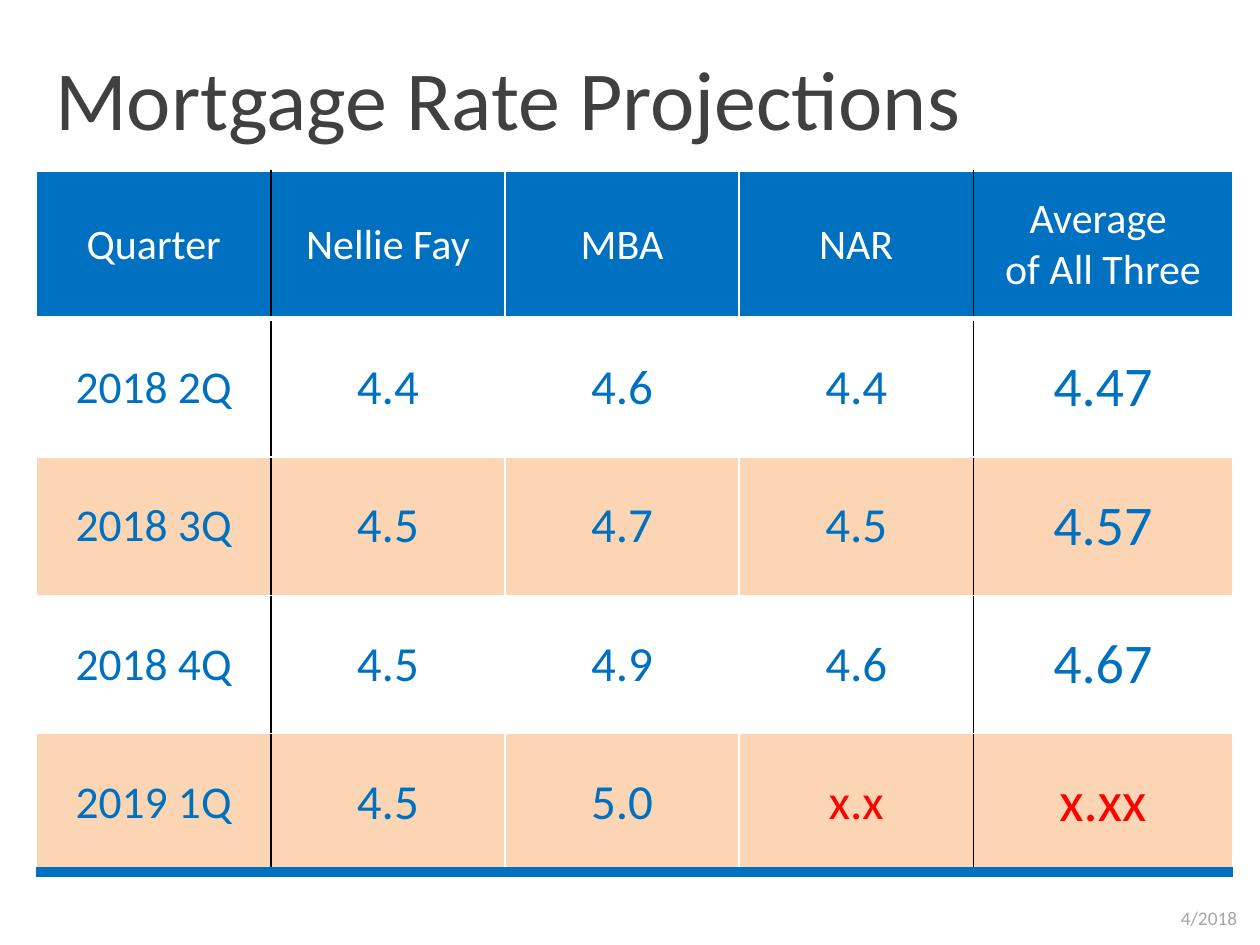
from lxml import etree
from pptx import Presentation
from pptx import util as u
from pptx.dml.color import RGBColor
from pptx.enum import text
from pptx.oxml.ns import qn

BLUE, PEACH, WHITE, BLACK, RED = "0070C0", "FCD5B5", "FFFFFF", "000000", "FF0000"
HEADERS = ["Quarter", "Nellie Fay", "MBA", "NAR", "Average \nof All Three"]
RATES = [
    ["2018 2Q", "4.4", "4.6", "4.4", "4.47"],
    ["2018 3Q", "4.5", "4.7", "4.5", "4.57"],
    ["2018 4Q", "4.5", "4.9", "4.6", "4.67"],
    ["2019 1Q", "4.5", "5.0", "x.x", "x.xx"],
]
COL_WIDTHS = [4.72] * 4 + [5.23]
ROW_HEIGHTS = [2.97] + [2.79] * 4
BODY_SIZES = [26, 28, 28, 28, 32]
DARK_EDGES = (1, 4)  # black rules stand left of these columns


def color(hex_code):
    return RGBColor.from_string(hex_code)


def write(tf, content, size, fill, align=text.PP_ALIGN.LEFT):
    tf.text = content
    for p in tf.paragraphs:
        p.alignment = align
        for r in p.runs:
            r.font.name = "Calibri"
            r.font.size = u.Pt(size)
            r.font.color.rgb = color(fill)


def place(sp, left, top, width, height):
    sp.left, sp.top, sp.width, sp.height = (u.Cm(v) for v in (left, top, width, height))


def add_border(cell, side, hex_code, width):
    ln = etree.SubElement(cell._tc.get_or_add_tcPr(), qn(f"a:ln{side}"), w=str(u.Pt(width)))
    solid = etree.SubElement(ln, qn("a:solidFill"))
    etree.SubElement(solid, qn("a:srgbClr"), val=hex_code)


def format_cell(cell, row, col, content):
    last_row = len(RATES)
    # Borders come before the fill in the cell properties
    add_border(cell, "L", BLACK if col in DARK_EDGES else WHITE, 1)
    add_border(cell, "R", BLACK if col + 1 in DARK_EDGES else WHITE, 1)
    add_border(cell, "T", WHITE, 3 if row == 1 else 1)
    if row == last_row:
        add_border(cell, "B", BLUE, 6)
    else:
        add_border(cell, "B", WHITE, 3 if row == 0 else 1)

    cell.fill.solid()
    if row == 0:
        fill, ink, size = BLUE, WHITE, 24
    else:
        fill = WHITE if row % 2 else PEACH
        ink = RED if content.startswith("x") else BLUE
        size = BODY_SIZES[col]
    cell.fill.fore_color.rgb = color(fill)
    cell.vertical_anchor = text.MSO_ANCHOR.MIDDLE
    cell.margin_left = cell.margin_right = u.Cm(0.25)
    cell.margin_top = cell.margin_bottom = u.Cm(0.18)
    write(cell.text_frame, content, size, ink, text.PP_ALIGN.CENTER)


def add_title(s):
    sp = s.shapes.title
    place(sp, 0.86, 0.81, 22.02, 2.31)
    tf = sp.text_frame
    tf.vertical_anchor = text.MSO_ANCHOR.TOP
    tf.auto_size = text.MSO_AUTO_SIZE.SHAPE_TO_FIT_TEXT
    write(tf, "Mortgage Rate Projections", 48, "404040")


def add_rate_table(s):
    rows = [HEADERS] + RATES
    frame = s.shapes.add_table(len(rows), len(HEADERS), u.Cm(0.74), u.Cm(3.45),
                               u.Cm(sum(COL_WIDTHS)), u.Cm(sum(ROW_HEIGHTS)))
    table = frame.table
    for column, width in zip(table.columns, COL_WIDTHS):
        column.width = u.Cm(width)
    for i, (values, height) in enumerate(zip(rows, ROW_HEIGHTS)):
        table.rows[i].height = u.Cm(height)
        for j, content in enumerate(values):
            format_cell(table.cell(i, j), i, j, content)


def add_date(s):
    sp = s.shapes.add_textbox(u.Cm(21.84), u.Cm(18.14), u.Cm(3.35), u.Cm(0.74))
    tf = sp.text_frame
    tf.word_wrap = True
    tf.auto_size = text.MSO_AUTO_SIZE.SHAPE_TO_FIT_TEXT
    write(tf, "4/2018", 11, "A6A6A6", text.PP_ALIGN.RIGHT)


def main():
    prs = Presentation()
    prs.slide_width, prs.slide_height = u.Cm(25.4), u.Cm(19.05)
    s = prs.slides.add_slide(prs.slide_layouts[5])
    add_title(s)
    add_date(s)
    add_rate_table(s)
    prs.save("out.pptx")


if __name__ == "__main__":
    main()
